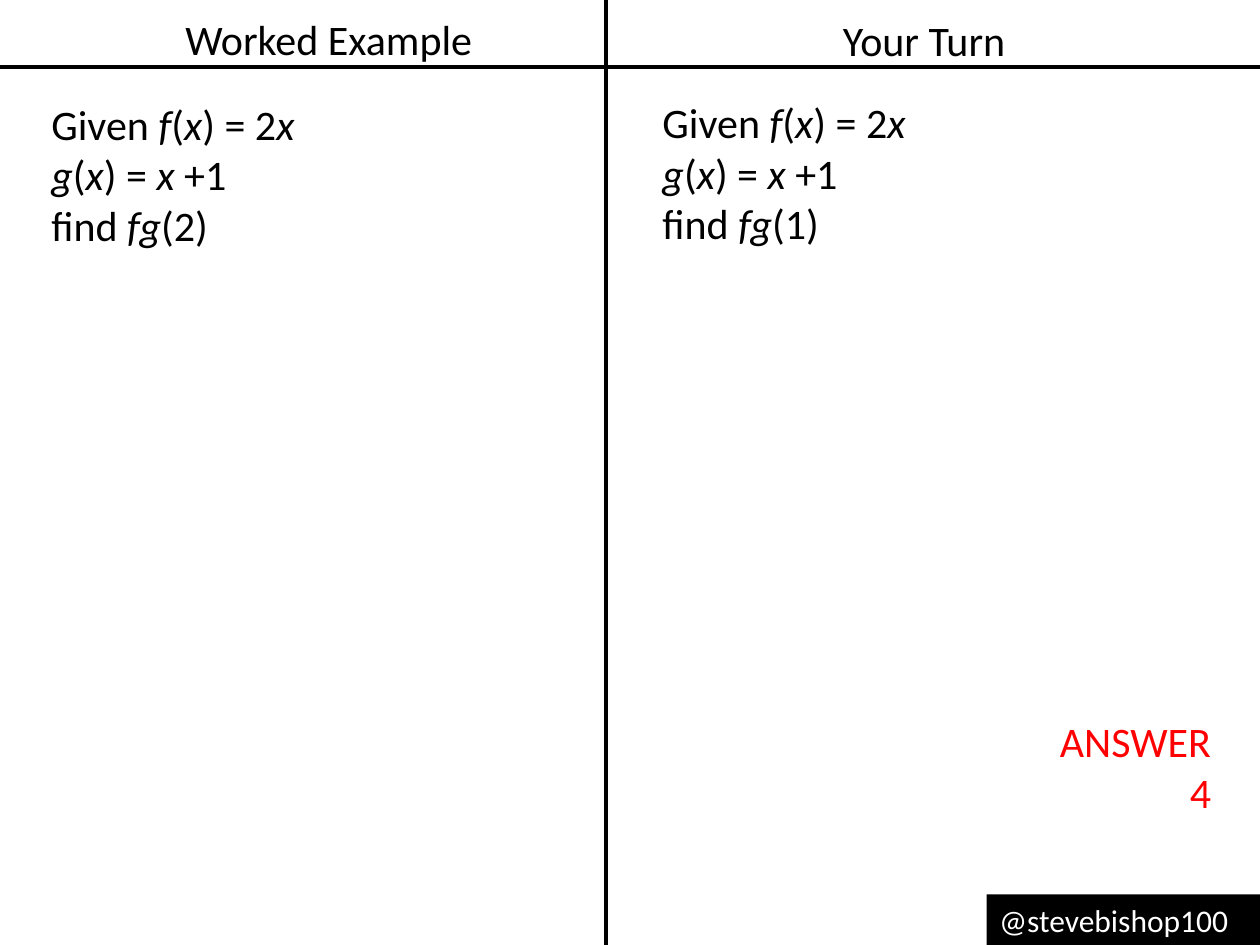
"""Build a two-column worked example slide on composite functions."""
from lxml import etree
from pptx import Presentation
from pptx.dml.color import RGBColor
from pptx.enum.shapes import MSO_CONNECTOR, MSO_SHAPE
from pptx.enum.text import PP_ALIGN
from pptx.oxml.ns import qn
from pptx.util import Pt

LEFT, CENTER, RIGHT = PP_ALIGN.LEFT, PP_ALIGN.CENTER, PP_ALIGN.RIGHT
STRAIGHT, RECTANGLE = MSO_CONNECTOR.STRAIGHT, MSO_SHAPE.RECTANGLE
WIDTH, HEIGHT = 720, 540
DIVIDER_X, HEADER_Y = 346.3, 38.2
FONT = "Calibri"
BLACK, WHITE, RED = "000000", "FFFFFF", "FF0000"

HEADINGS = [
    ("Worked Example", (81.4, 4.3, 213, 36)),
    ("Your Turn", (458.6, 4.7, 139, 36)),
]
FUNCTIONS = ["Given* f*(*x*) = 2*x*", "*g*(*x*) = *x *+1"]
QUESTIONS = [
    ("find *fg*(2)", (22.3, 52.6, 313, 94.3)),
    ("find *fg*(1)", (371.5, 51.8, 313, 94.3)),
]
ANSWER = (["ANSWER", "4"], (597.6, 405.4, 101.5, 65.5))
HANDLE = ("@stevebishop100", (563.8, 511, 156.2, 29))
RULES = [(DIVIDER_X, 0, DIVIDER_X, HEIGHT), (0, HEADER_Y, WIDTH, HEADER_Y)]


def color(value):
    return RGBColor.from_string(value)


def write_lines(shape, lines, size=24, ink=BLACK, alignment=LEFT):
    """Fill a shape with lines in which asterisks enclose italic text."""
    frame = shape.text_frame
    frame.word_wrap = True
    frame.text = "\n".join(lines)
    for paragraph, line in zip(frame.paragraphs, lines):
        paragraph.text = ""
        paragraph.alignment = alignment
        for index, part in enumerate(line.split("*")):
            if part:
                run = paragraph.add_run()
                run.text = part
                run.font.name = FONT
                run.font.size = Pt(size)
                run.font.italic = index % 2 == 1
                run.font.color.rgb = color(ink)


def add_text(slide, lines, box, **style):
    shape = slide.shapes.add_textbox(*map(Pt, box))
    write_lines(shape, lines, **style)
    return shape


def add_rule(slide, ends):
    rule = slide.shapes.add_connector(STRAIGHT, *map(Pt, ends))
    rule.line.color.rgb = color(BLACK)
    rule.line.width = Pt(2.5)
    etree.SubElement(rule._element.spPr, qn("a:effectLst"))


def add_handle(slide, text, box):
    bar = slide.shapes.add_shape(RECTANGLE, *map(Pt, box))
    bar.shadow.inherit = False
    bar.fill.solid()
    bar.fill.fore_color.rgb = color(BLACK)
    bar.line.fill.background()
    write_lines(bar, [text], size=18, ink=WHITE)


def main():
    presentation = Presentation()
    presentation.slide_width, presentation.slide_height = Pt(WIDTH), Pt(HEIGHT)
    slide = presentation.slides.add_slide(presentation.slide_layouts[6])
    for heading, box in HEADINGS:
        add_text(slide, [heading], box, alignment=CENTER)
    for ends in RULES:
        add_rule(slide, ends)
    add_handle(slide, *HANDLE)
    for question, box in QUESTIONS:
        add_text(slide, FUNCTIONS + [question], box)
    answer = add_text(slide, *ANSWER, ink=RED, alignment=RIGHT)
    answer.text_frame.word_wrap = False
    presentation.save("out.pptx")


if __name__ == "__main__":
    main()
